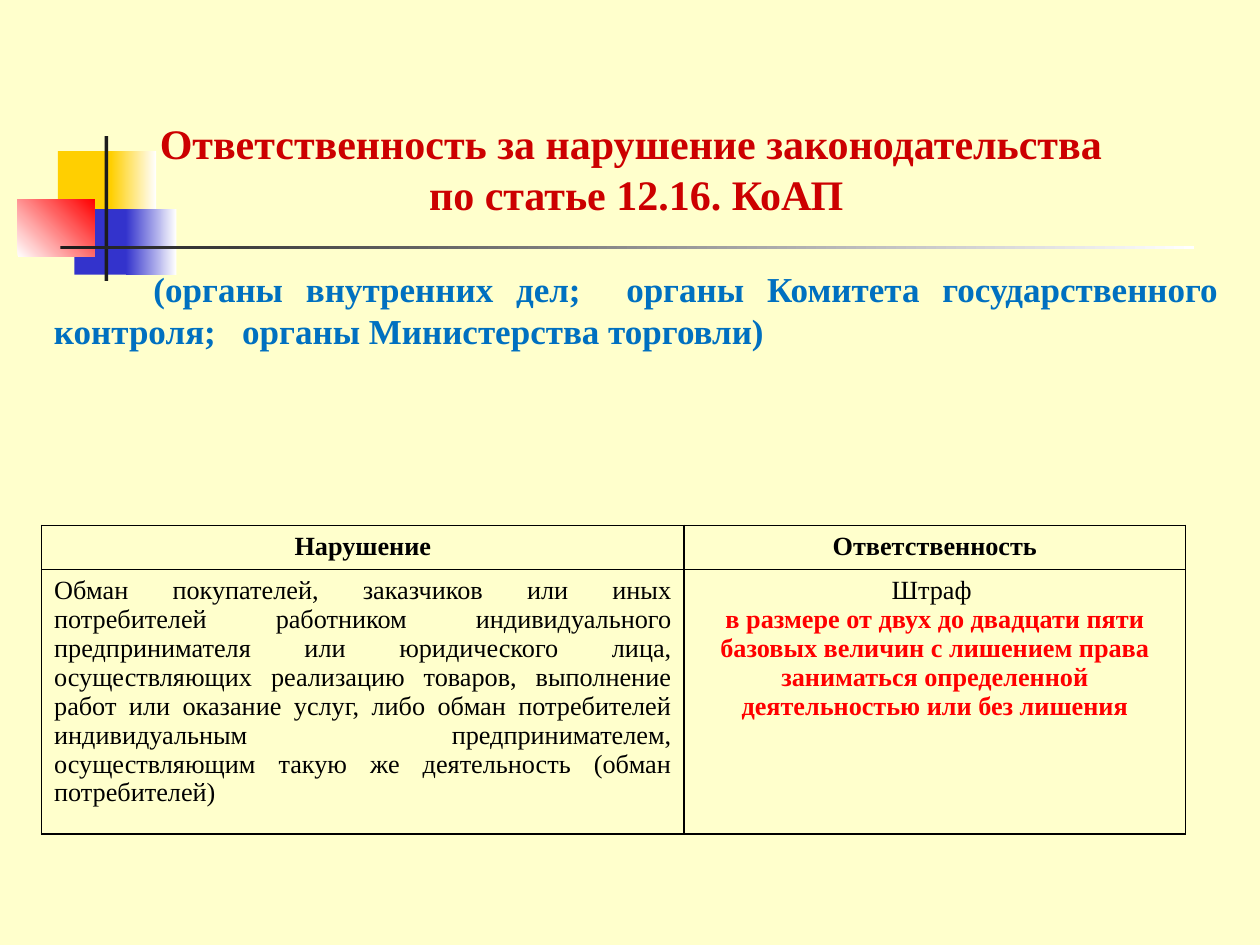
"""Build a slide on liability under article 12.16."""
from dataclasses import dataclass
from typing import Optional

from lxml.etree import SubElement
from pptx import Presentation
from pptx.dml.color import RGBColor
from pptx.enum.shapes import MSO_SHAPE
from pptx.enum.text import MSO_ANCHOR, PP_ALIGN
from pptx.oxml.ns import qn
from pptx.util import Inches, Pt

CREAM = RGBColor(0xFF, 0xFF, 0xCC)
GOLD = RGBColor(0xFF, 0xCF, 0x01)
INDIGO = RGBColor(0x33, 0x33, 0xCC)
COAL = RGBColor(0x1C, 0x1C, 0x1C)
WHITE = RGBColor(0xFF, 0xFF, 0xFF)
BLACK = RGBColor(0, 0, 0)
RED = RGBColor(0xFF, 0, 0)
CRIMSON = RGBColor(0xCC, 0, 0)
BLUE = RGBColor(0, 0x70, 0xC0)
FONT = "Times New Roman"


@dataclass
class Block:
    left: float
    top: float
    width: float
    height: float
    color: RGBColor
    fade: Optional[RGBColor] = None
    angle: float = 0


@dataclass
class Line:
    text: str
    size: float = 15
    color: RGBColor = BLACK
    bold: bool = False
    align: PP_ALIGN = PP_ALIGN.CENTER
    before: float = 0
    indent: float = 0


BLOCKS = [
    Block(0.46, 1.2, 0.48, 0.52, GOLD),
    Block(0.88, 1.2, 0.36, 0.52, GOLD, WHITE),
    Block(0.59, 1.66, 0.46, 0.52, INDIGO),
    Block(1, 1.66, 0.4, 0.52, INDIGO, WHITE),
    Block(0.14, 1.58, 0.61, 0.46, WHITE, RED, 45),
    Block(0.83, 1.08, 0.03, 1.15, COAL),
    Block(0.48, 1.95, 9, 0.03, COAL, WHITE),
]
TITLE = [
    Line("Ответственность за нарушение законодательства \vпо статье 12.16. КоАП",
         24, CRIMSON, True),
    Line("(органы внутренних дел;  органы Комитета государственного контроля;   "
         "органы Министерства торговли)", 20, BLUE, True, PP_ALIGN.JUSTIFY, 28, 0.79),
]
ROWS = [
    [[Line("Нарушение", bold=True)], [Line("Ответственность", bold=True)]],
    [
        [Line("Обман покупателей, заказчиков или иных потребителей работником "
              "индивидуального предпринимателя или юридического лица, осуществляющих "
              "реализацию товаров, выполнение работ или оказание услуг, либо обман "
              "потребителей индивидуальным предпринимателем, осуществляющим такую же "
              "деятельность (обман потребителей)", align=PP_ALIGN.JUSTIFY)],
        [Line("Штраф "),
         Line("в размере от двух до двадцати пяти базовых величин с лишением права "
              "заниматься определенной деятельностью или без лишения",
              color=RED, bold=True)],
    ],
]
WIDTHS = [5.1, 3.98]
HEIGHTS = [0.33, 1.94]


def draw_block(slide, block: Block) -> None:
    shape = slide.shapes.add_shape(
        MSO_SHAPE.RECTANGLE, Inches(block.left), Inches(block.top),
        Inches(block.width), Inches(block.height))
    shape.shadow.inherit = False
    shape.line.fill.background()
    if block.fade is None:
        shape.fill.solid()
        shape.fill.fore_color.rgb = block.color
        return
    shape.fill.gradient()
    shape.fill.gradient_angle = block.angle
    for stop, color in zip(shape.fill.gradient_stops, (block.color, block.fade)):
        stop.color.rgb = color


def write(frame, lines: list[Line]) -> None:
    frame.word_wrap = True
    for i, line in enumerate(lines):
        para = frame.add_paragraph() if i else frame.paragraphs[0]
        para.text = line.text
        para.alignment = line.align
        para.space_before = Pt(line.before)
        font = para.font
        font.name, font.size, font.bold = FONT, Pt(line.size), line.bold
        font.color.rgb = line.color
        if line.indent:
            props = para._p.get_or_add_pPr()
            props.set("marL", "0")
            props.set("indent", str(Inches(line.indent)))


def draw_title(slide) -> None:
    box = slide.shapes.add_textbox(Inches(0.33), Inches(0.83), Inches(9.44), Inches(2.33))
    frame = box.text_frame
    frame.vertical_anchor = MSO_ANCHOR.BOTTOM
    frame.margin_bottom = Inches(0.37)
    write(frame, TITLE)


def frame_cell(cell) -> None:
    props = cell._tc.get_or_add_tcPr()
    for side in ("lnL", "lnR", "lnT", "lnB"):
        edge = SubElement(props, qn(f"a:{side}"), w=str(Pt(1)))
        fill = SubElement(edge, qn("a:solidFill"))
        SubElement(fill, qn("a:srgbClr"), val=str(BLACK))
    cell.fill.background()


def draw_table(slide) -> None:
    table = slide.shapes.add_table(
        len(ROWS), len(WIDTHS), Inches(0.33), Inches(4.17),
        Inches(sum(WIDTHS)), Inches(sum(HEIGHTS))).table
    table.first_row = table.horz_banding = False
    for col, width in zip(table.columns, WIDTHS):
        col.width = Inches(width)
    for row, height, texts in zip(table.rows, HEIGHTS, ROWS):
        row.height = Inches(height)
        for cell, lines in zip(row.cells, texts):
            frame_cell(cell)
            write(cell.text_frame, lines)


def main() -> None:
    deck = Presentation()
    deck.slide_width, deck.slide_height = Inches(10), Inches(7.5)
    slide = deck.slides.add_slide(deck.slide_layouts[6])
    slide.background.fill.solid()
    slide.background.fill.fore_color.rgb = CREAM
    for block in BLOCKS:
        draw_block(slide, block)
    draw_title(slide)
    draw_table(slide)
    deck.save("out.pptx")


if __name__ == "__main__":
    main()
